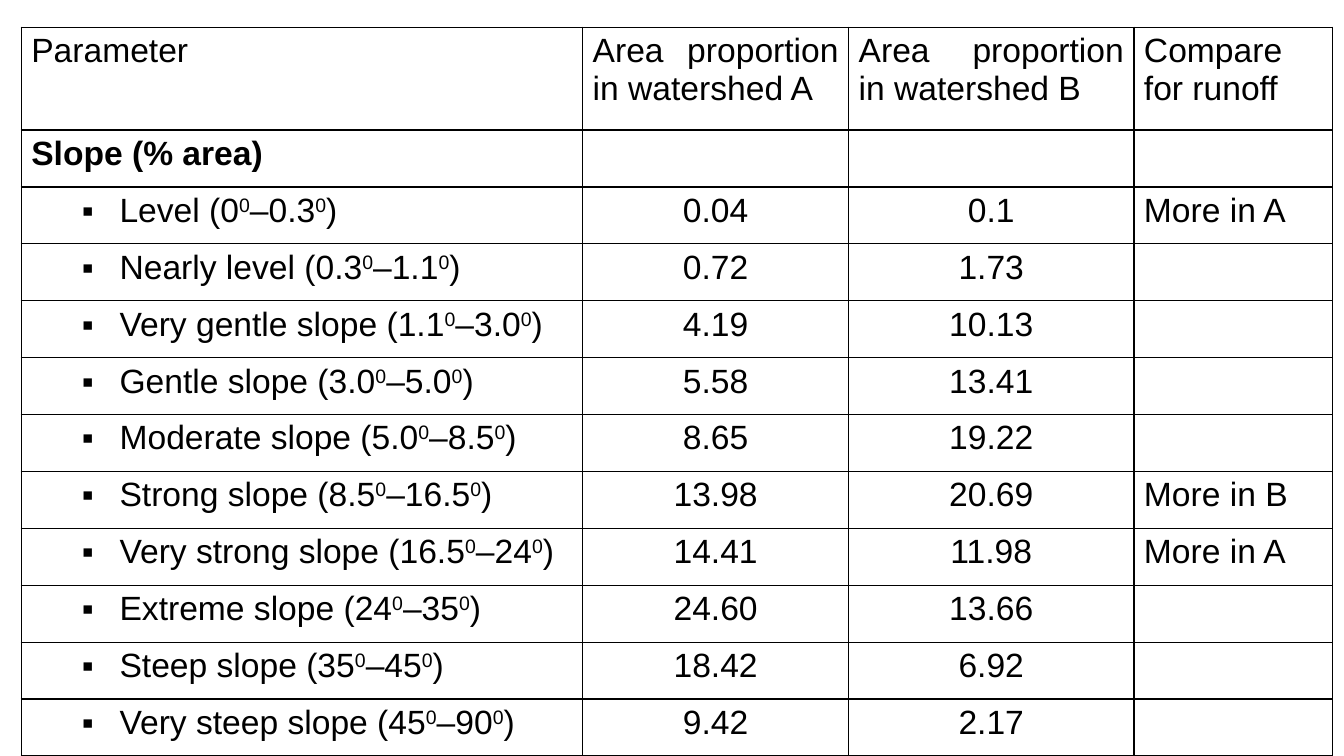
from lxml import etree
from pptx import Presentation
from pptx.dml.color import RGBColor
from pptx.enum.text import PP_ALIGN
from pptx.oxml.ns import qn
from pptx.util import Pt

JUSTIFY = PP_ALIGN.JUSTIFY
CENTER = PP_ALIGN.CENTER
BLANK_LAYOUT = 6

COLUMN_WIDTHS = [401, 190, 203.8, 142]
HEADER_HEIGHT = 73.5
ROW_HEIGHT = 40.65

HEADERS = ["Parameter", "Area proportion in watershed A",
           "Area proportion in watershed B", "Compare for runoff"]
SLOPES = [
    ("Level", "0", "0.3", "0.04", "0.1", "More in A"),
    ("Nearly level", "0.3", "1.1", "0.72", "1.73", ""),
    ("Very gentle slope", "1.1", "3.0", "4.19", "10.13", ""),
    ("Gentle slope", "3.0", "5.0", "5.58", "13.41", ""),
    ("Moderate slope", "5.0", "8.5", "8.65", "19.22", ""),
    ("Strong slope", "8.5", "16.5", "13.98", "20.69", "More in B"),
    ("Very strong slope", "16.5", "24", "14.41", "11.98", "More in A"),
    ("Extreme slope", "24", "35", "24.60", "13.66", ""),
    ("Steep slope", "35", "45", "18.42", "6.92", ""),
    ("Very steep slope", "45", "90", "9.42", "2.17", ""),
]


def color(hex_string):
    return RGBColor.from_string(hex_string)


class SlideBuilder:
    font_name = "Arial"
    font_size = 24
    text_color = "000000"
    fill_color = "FFFFFF"
    border_width = 1

    def __init__(self, slide):
        self.slide = slide

    def table(self, left, top, widths, heights):
        frame = self.slide.shapes.add_table(
            len(heights), len(widths), Pt(left), Pt(top),
            Pt(sum(widths)), Pt(sum(heights)))
        table = frame.table
        table.first_row = False
        table.horz_banding = False
        for column, width in zip(table.columns, widths):
            column.width = Pt(width)
        for row, height in zip(table.rows, heights):
            row.height = Pt(height)
        for cell in table.iter_cells():
            cell.fill.solid()
            cell.fill.fore_color.rgb = color(self.fill_color)
            self.borders(cell)
        return table

    def borders(self, cell):
        properties = cell._tc.get_or_add_tcPr()
        for position, side in enumerate(("a:lnL", "a:lnR", "a:lnT", "a:lnB")):
            line = etree.Element(qn(side), w=str(Pt(self.border_width)))
            fill = etree.SubElement(line, qn("a:solidFill"))
            etree.SubElement(fill, qn("a:srgbClr"), val=self.text_color)
            properties.insert(position, line)

    def text(self, cell, parts, alignment=JUSTIFY, bold=False, bullet=False):
        paragraph = cell.text_frame.paragraphs[0]
        paragraph.alignment = alignment
        if bullet:
            self.bullet(paragraph)
        font = paragraph.font
        font.name = self.font_name
        font.size = Pt(self.font_size)
        font.bold = bold
        font.color.rgb = color(self.text_color)
        for index, part in enumerate(parts):
            run = paragraph.add_run()
            run.text = part
            if index % 2:
                run._r.get_or_add_rPr().set("baseline", "30000")

    def bullet(self, paragraph):
        paragraph.level = 1
        properties = paragraph._p.get_or_add_pPr()
        properties.set("marL", str(Pt(63)))
        properties.set("indent", str(Pt(-27)))
        etree.SubElement(properties, qn("a:buFont"), typeface=self.font_name)
        etree.SubElement(properties, qn("a:buChar"), char="▪")


def main():
    presentation = Presentation()
    presentation.slide_width = Pt(960)
    presentation.slide_height = Pt(540)
    layout = presentation.slide_layouts[BLANK_LAYOUT]
    builder = SlideBuilder(presentation.slides.add_slide(layout))

    heights = [HEADER_HEIGHT] + [ROW_HEIGHT] * (len(SLOPES) + 1)
    table = builder.table(15.2, 19.4, COLUMN_WIDTHS, heights)
    for column, header in enumerate(HEADERS):
        builder.text(table.cell(0, column), [header])
    builder.text(table.cell(1, 0), ["Slope (% area)"], bold=True)

    for row, (name, low, high, area_a, area_b, runoff) in enumerate(SLOPES, 2):
        parts = [f"{name} ({low}", "0", f"–{high}", "0", ")"]
        builder.text(table.cell(row, 0), parts, bullet=True)
        builder.text(table.cell(row, 1), [area_a], CENTER)
        builder.text(table.cell(row, 2), [area_b], CENTER)
        if runoff:
            builder.text(table.cell(row, 3), [runoff])

    presentation.save("out.pptx")


if __name__ == "__main__":
    main()
